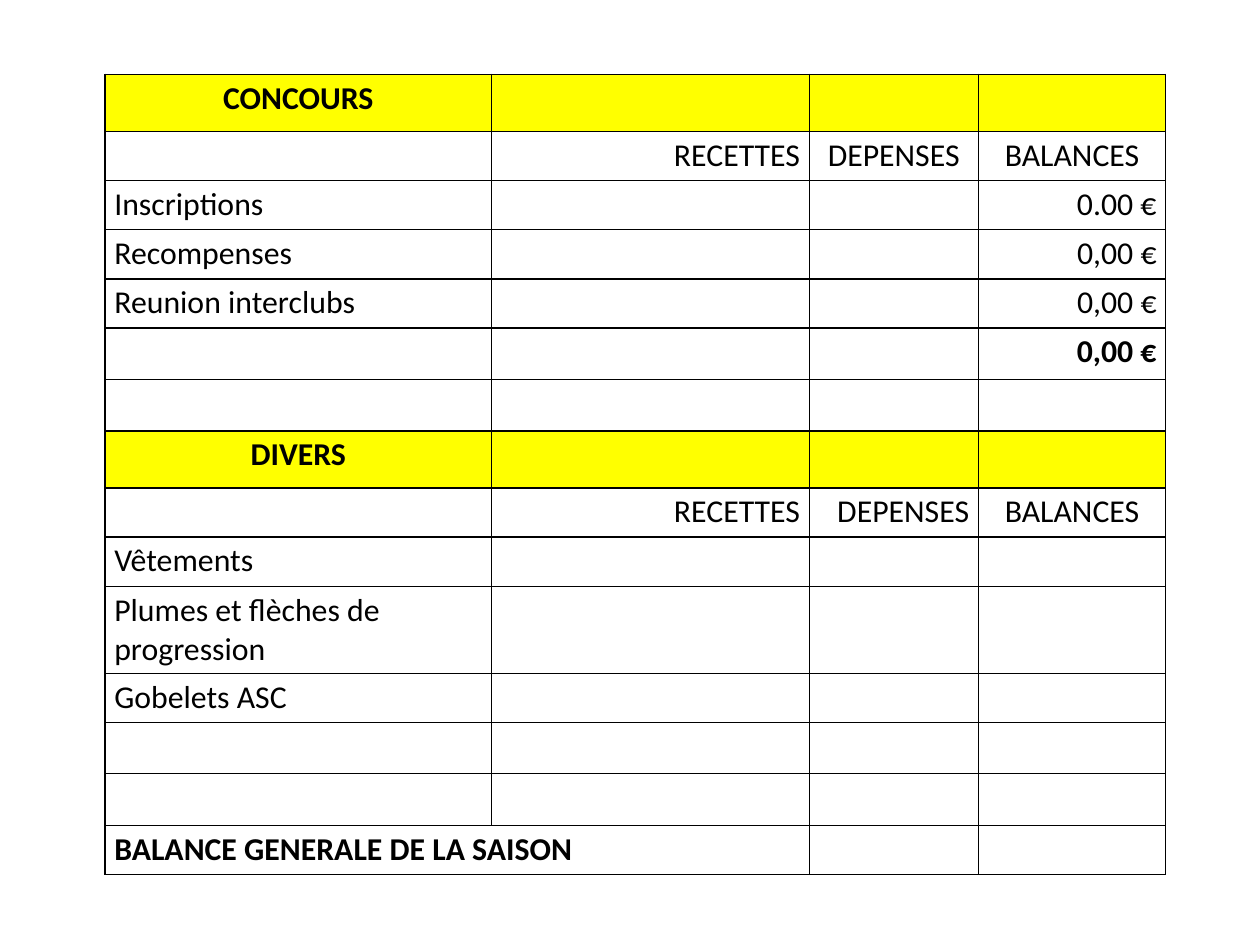
from dataclasses import dataclass

from lxml import etree
from pptx import Presentation
from pptx.dml.color import RGBColor
from pptx.enum.text import PP_ALIGN
from pptx.oxml.ns import qn
from pptx.table import Table, _Cell
from pptx.util import Cm, Inches, Pt

LEFT, MID, RIGHT = PP_ALIGN.LEFT, PP_ALIGN.CENTER, PP_ALIGN.RIGHT
BLACK = RGBColor(0, 0, 0)
YELLOW = RGBColor(0xFF, 0xFF, 0)
FONT, SIZE = "Calibri", Pt(20)
COLS = (3.38, 2.78, 1.48, 1.64)
LINE, HEAD, GAP = 0.43, 0.5, 0.45  # row heights


@dataclass
class Entry:
    text: str = ""
    align: PP_ALIGN = LEFT
    bold: bool = False


@dataclass
class Row:
    cells: tuple[Entry, ...] = ()
    height: float = LINE
    fill: RGBColor | None = None


def band(title: str) -> Row:
    return Row((Entry(title, MID, True),), HEAD, YELLOW)


def heads(align: PP_ALIGN) -> Row:
    return Row((Entry(), Entry("RECETTES", RIGHT), Entry("DEPENSES", align),
                Entry("BALANCES", MID)))


def item(name: str, sum_: str = "", bold: bool = False, height: float = LINE) -> Row:
    return Row((Entry(name), Entry(), Entry(), Entry(sum_, RIGHT, bold)), height)


ROWS = (
    band("CONCOURS"),
    heads(MID),
    item("Inscriptions", "0.00 €"),
    item("Recompenses", "0,00 €"),
    item("Reunion interclubs", "0,00 €"),
    item("", "0,00 €", True, GAP),
    Row(height=GAP),
    band("DIVERS"),
    heads(RIGHT),
    item("Vêtements"),
    item("Plumes et flèches de progression", height=0.44),
    item("Gobelets ASC"),
    Row(height=GAP),
    Row(height=GAP),
    Row((Entry("BALANCE GENERALE DE LA SAISON", LEFT, True),)),
)


def frame(cell: _Cell) -> None:
    """Draw the four borders of a cell."""
    props = cell._tc.get_or_add_tcPr()
    for side in ("a:lnL", "a:lnR", "a:lnT", "a:lnB"):
        line = etree.SubElement(props, qn(side), w=str(Pt(1)))
        fill = etree.SubElement(line, qn("a:solidFill"))
        etree.SubElement(fill, qn("a:srgbClr"), val=str(BLACK))


def write(cell: _Cell, entry: Entry) -> None:
    cell.margin_left = cell.margin_right = Inches(0.08)
    cell.margin_top = cell.margin_bottom = Inches(0.04)
    cell.text_frame.text = entry.text
    para = cell.text_frame.paragraphs[0]
    para.alignment = entry.align
    for run in para.runs:
        run.font.name, run.font.size = FONT, SIZE
        run.font.bold = entry.bold
        run.font.color.rgb = BLACK


def fill_row(table: Table, num: int, row: Row) -> None:
    table.rows[num].height = Inches(row.height)
    for col in range(len(COLS)):
        cell = table.cell(num, col)
        frame(cell)
        if row.fill is None:
            cell.fill.background()
        else:
            cell.fill.solid()
            cell.fill.fore_color.rgb = row.fill
        if col < len(row.cells) and row.cells[col].text:
            write(cell, row.cells[col])


def main() -> None:
    deck = Presentation()
    deck.slide_width, deck.slide_height = Cm(28), Cm(21)
    slide = deck.slides.add_slide(deck.slide_layouts[6])

    # Budget table
    table = slide.shapes.add_table(
        len(ROWS), len(COLS), Inches(0.92), Inches(0.65),
        Inches(sum(COLS)), Inches(sum(row.height for row in ROWS))).table
    table.first_row = table.horz_banding = False
    for col, width in zip(table.columns, COLS):
        col.width = Inches(width)
    for num, row in enumerate(ROWS):
        fill_row(table, num, row)

    # Season total spans the first two columns
    last = len(ROWS) - 1
    table.cell(last, 0).merge(table.cell(last, 1))
    deck.save("out.pptx")


if __name__ == "__main__":
    main()
